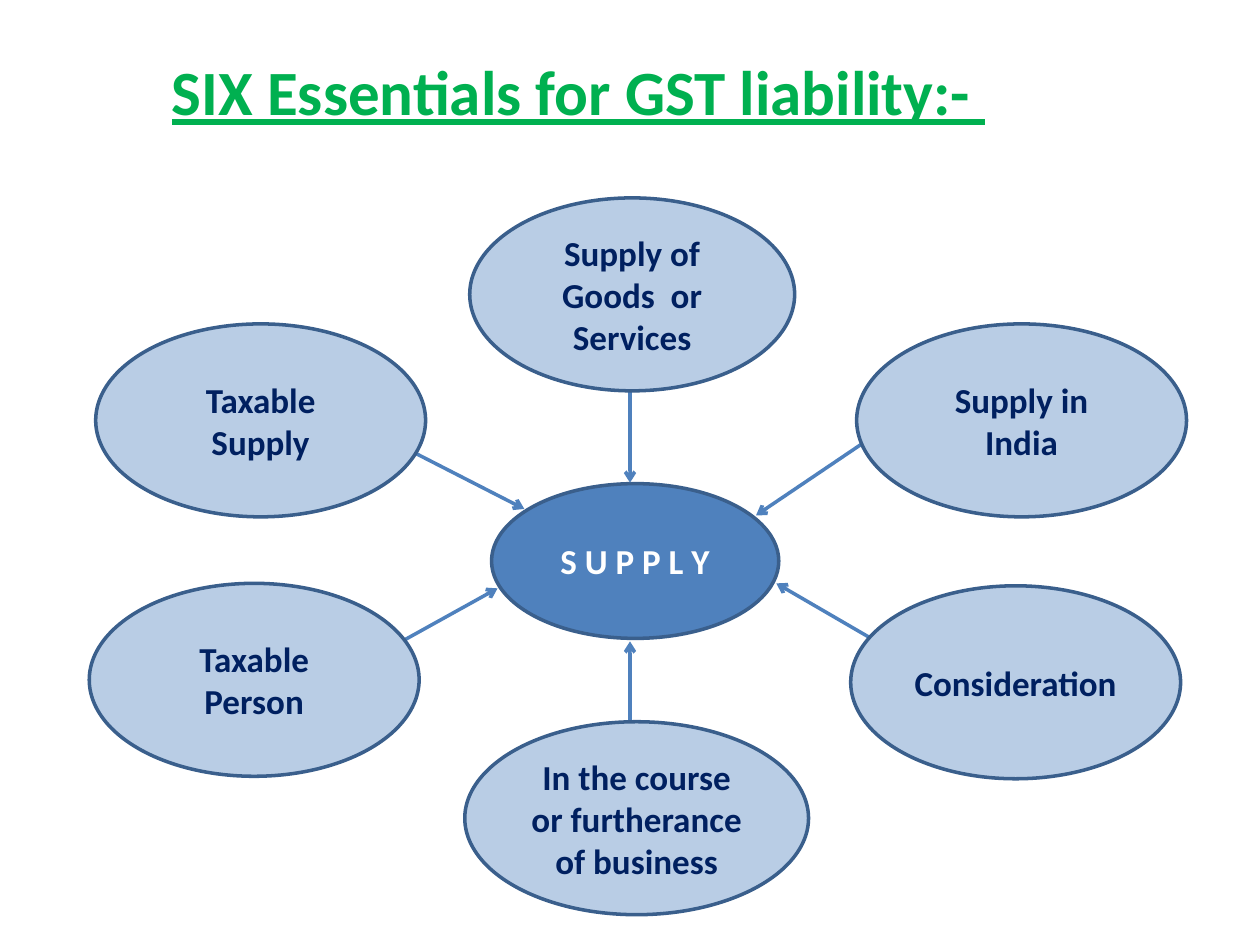
from dataclasses import dataclass

from lxml.etree import SubElement
from pptx import Presentation
from pptx.dml.color import RGBColor
from pptx.enum.shapes import MSO_CONNECTOR as Connector, MSO_SHAPE as Shape
from pptx.enum.text import MSO_ANCHOR as Anchor, PP_ALIGN as Align
from pptx.oxml.ns import qn
from pptx.slide import Slide
from pptx.text.text import TextFrame
from pptx.util import Cm, Pt


@dataclass(frozen=True)
class Theme:
    font: str = "Calibri"
    title_size: int = 36
    body_size: int = 20
    line_width: int = 2
    white: str = "FFFFFF"
    title: str = "00B050"
    hub: str = "4F81BD"
    oval: str = "B9CDE5"
    oval_text: str = "002060"
    outline: str = "3A5F8C"


@dataclass(frozen=True)
class Oval:
    text: str
    left: float
    top: float
    width: float = 6.65
    height: float = 3.89
    fill: str = Theme.oval
    color: str = Theme.oval_text


@dataclass(frozen=True)
class Arrow:
    x1: float
    y1: float
    x2: float
    y2: float


THEME = Theme()

HUB = Oval("S U P P L Y", 9.91, 9.75, 5.79, 3.12, THEME.hub, THEME.white)

ESSENTIALS = [
    Oval("Supply of Goods  or Services", 9.47, 3.99, 6.55),
    Oval("Taxable Person", 1.8, 11.76),
    Oval("In the course or furtherance of business", 9.37, 14.55, 6.93),
    Oval("Consideration", 17.15, 11.81),
    Oval("Taxable Supply", 1.93, 6.53),
    Oval("Supply in India", 17.27, 6.53),
]

ARROWS = [
    Arrow(12.7, 7.87, 12.7, 9.73),
    Arrow(12.7, 14.53, 12.7, 12.93),
    Arrow(7.95, 8.92, 10.57, 10.26),
    Arrow(17.58, 8.81, 15.24, 10.39),
    Arrow(8.1, 12.93, 10.03, 11.86),
    Arrow(17.58, 12.88, 15.65, 11.76),
]


def set_text(tf: TextFrame, text: str, size: int, color: str, underline: bool = False) -> None:
    tf.text = text
    tf.word_wrap = True
    tf.vertical_anchor = Anchor.MIDDLE
    p = tf.paragraphs[0]
    p.alignment = Align.CENTER
    font = p.runs[0].font
    font.name = THEME.font
    font.size = Pt(size)
    font.bold = True
    font.underline = underline
    font.color.rgb = RGBColor.from_string(color)


def add_title(s: Slide, text: str) -> None:
    sp = s.shapes.title
    sp.left, sp.top, sp.width, sp.height = Cm(1.3), Cm(0.53), Cm(20.73), Cm(2.59)
    sp.fill.solid()
    sp.fill.fore_color.rgb = RGBColor.from_string(THEME.white)
    set_text(sp.text_frame, text, THEME.title_size, THEME.title, underline=True)


def add_oval(s: Slide, oval: Oval) -> None:
    sp = s.shapes.add_shape(
        Shape.OVAL, Cm(oval.left), Cm(oval.top), Cm(oval.width), Cm(oval.height)
    )
    sp.shadow.inherit = False
    sp.fill.solid()
    sp.fill.fore_color.rgb = RGBColor.from_string(oval.fill)
    sp.line.color.rgb = RGBColor.from_string(THEME.outline)
    sp.line.width = Pt(THEME.line_width)
    set_text(sp.text_frame, oval.text, THEME.body_size, oval.color)


def add_arrow(s: Slide, arrow: Arrow) -> None:
    c = s.shapes.add_connector(
        Connector.STRAIGHT, Cm(arrow.x1), Cm(arrow.y1), Cm(arrow.x2), Cm(arrow.y2)
    )
    c.line.color.rgb = RGBColor.from_string(THEME.hub)
    c.line.width = Pt(THEME.line_width)
    SubElement(c.line._get_or_add_ln(), qn("a:tailEnd"), type="arrow")
    SubElement(c._element.spPr, qn("a:effectLst"))


def main() -> None:
    prs = Presentation()
    prs.slide_width, prs.slide_height = Cm(25.4), Cm(19.05)
    s = prs.slides.add_slide(prs.slide_layouts[5])
    add_title(s, "SIX Essentials for GST liability:- ")
    add_oval(s, HUB)
    for arrow in ARROWS:
        add_arrow(s, arrow)
    for oval in ESSENTIALS:
        add_oval(s, oval)
    prs.save("out.pptx")


if __name__ == "__main__":
    main()
